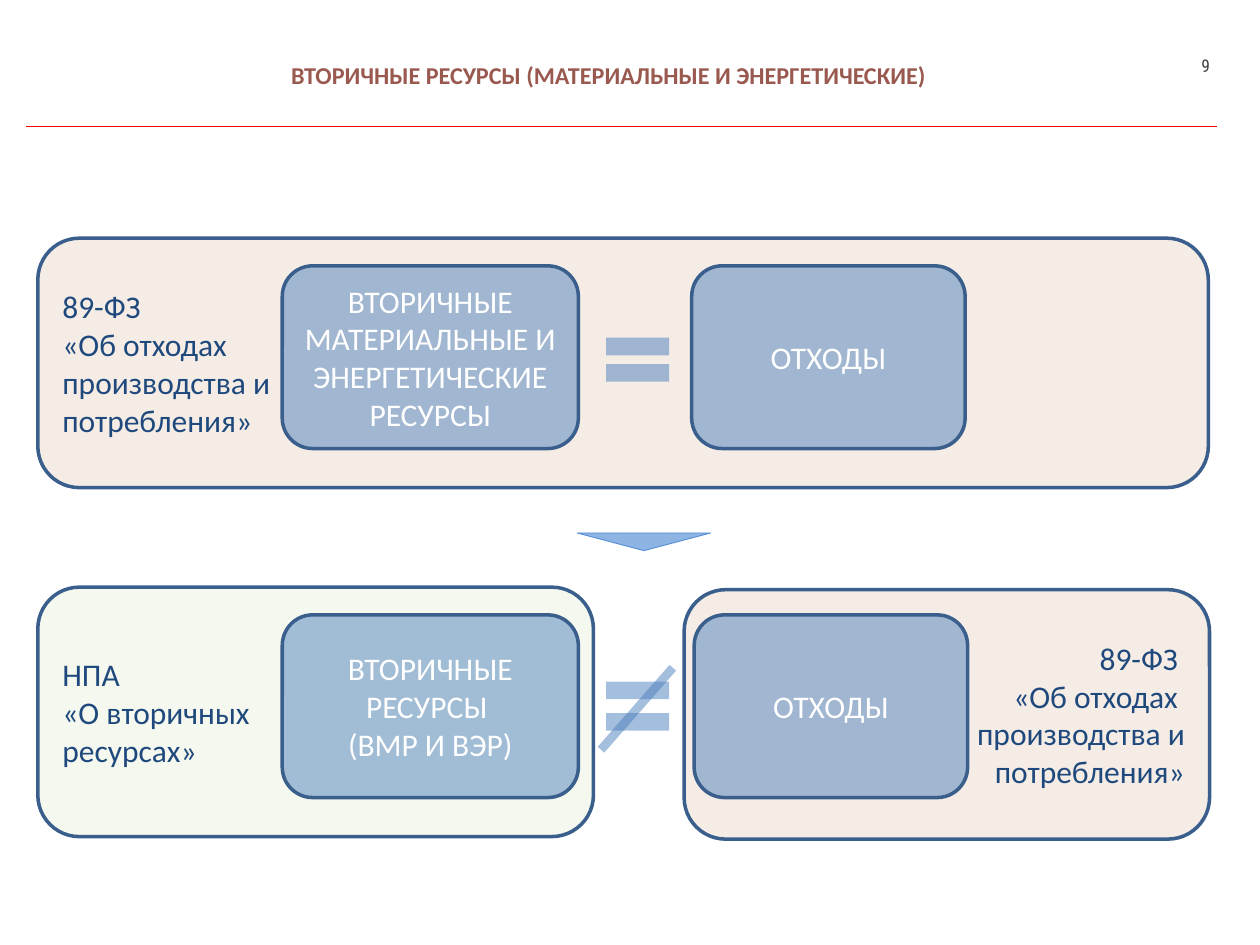
from lxml.etree import SubElement
from pptx import Presentation
from pptx.dml.color import RGBColor
from pptx.enum.shapes import MSO_CONNECTOR as Connector, MSO_SHAPE as Shape
from pptx.enum.text import MSO_ANCHOR as Anchor, MSO_AUTO_SIZE as AutoSize, PP_ALIGN as Align
from pptx.oxml.ns import qn
from pptx.util import Inches, Pt

WHITE = RGBColor(0xFF, 0xFF, 0xFF)
NAVY = RGBColor(0x1F, 0x49, 0x7D)
OUTLINE = RGBColor(0x3A, 0x5F, 0x8C)
BLUE = RGBColor(0x4F, 0x81, 0xBD)
SIGN_BLUE = RGBColor(0x4B, 0x7E, 0xBC)
BROWN = RGBColor(0x98, 0x48, 0x07)
GREEN = RGBColor(0x9B, 0xBB, 0x59)
RED = RGBColor(0xFF, 0x00, 0x00)
TITLE_BROWN = RGBColor(0x99, 0x59, 0x4F)
GRAY = RGBColor(0x40, 0x40, 0x40)
ARROW_FILL = RGBColor(0x8E, 0xB4, 0xE3)
ARROW_LINE = RGBColor(0x55, 0x8E, 0xD5)

LAW_COL, RESOURCE_COL, SIGN_COL, WASTE_COL = 0.3, 2.24, 4.81, 5.49
TOP_ROW, BOTTOM_ROW = 1.89, 4.66
CARD_OFFSET = 0.22
PANEL_H, CARD_H = 1.98, 1.45
RESOURCE_W, WASTE_W = 2.35, 2.17
SIGN_W = 0.5

WASTE_LAW = "89-ФЗ\n«Об отходах\nпроизводства и\nпотребления»"
WASTE_LAW_RIGHT = "89-ФЗ \n«Об отходах \nпроизводства и\nпотребления»"
RESOURCE_LAW = "НПА\n«О вторичных\nресурсах»"


def inches(*lengths):
    return [Inches(length) for length in lengths]


def set_alpha(fill_owner, percent):
    color = fill_owner.find(".//" + qn("a:srgbClr"))
    SubElement(color, qn("a:alpha")).set("val", str(percent * 1000))


def write(frame, text, size, color, align, font="Calibri", bold=False):
    frame.text = text
    frame.word_wrap = True
    for paragraph in frame.paragraphs:
        paragraph.alignment = align
        for run in paragraph.runs:
            run.font.name = font
            run.font.size = Pt(size)
            run.font.bold = bold
            run.font.color.rgb = color


def add_box(slide, place, text, fill, alpha, color, align):
    box = slide.shapes.add_shape(Shape.ROUNDED_RECTANGLE, *inches(*place))
    box.shadow.inherit = False
    box.fill.solid()
    box.fill.fore_color.rgb = fill
    set_alpha(box.fill._xPr, alpha)
    box.line.color.rgb = OUTLINE
    box.line.width = Pt(2)
    box.text_frame.vertical_anchor = Anchor.MIDDLE
    write(box.text_frame, text, 18, color, align)


def add_panel(slide, left, top, width, text, fill, align=Align.LEFT):
    add_box(slide, (left, top, width, PANEL_H), text, fill, 10, NAVY, align)


def add_card(slide, left, row, width, text):
    place = (left, row + CARD_OFFSET, width, CARD_H)
    add_box(slide, place, text, BLUE, 50, WHITE, Align.CENTER)


def add_line(slide, start, end, color, width, alpha=100):
    line = slide.shapes.add_connector(Connector.STRAIGHT, *inches(*start, *end))
    line.line.color.rgb = color
    line.line.width = Pt(width)
    if alpha < 100:
        set_alpha(line.line._ln, alpha)
    SubElement(line._element.spPr, qn("a:effectLst"))


def add_equals(slide, *bar_heights):
    for y in bar_heights:
        add_line(slide, (SIGN_COL, y), (SIGN_COL + SIGN_W, y), SIGN_BLUE, 10, 50)


def add_heading(slide):
    title = slide.shapes.title
    title.left, title.top, title.width, title.height = inches(2.31, 0.43, 7.35, 0.33)
    frame = title.text_frame
    frame.auto_size = AutoSize.NONE
    frame.margin_left = frame.margin_right = 0
    write(frame, "ВТОРИЧНЫЕ РЕСУРСЫ (МАТЕРИАЛЬНЫЕ И ЭНЕРГЕТИЧЕСКИЕ)",
          13.8, TITLE_BROWN, Align.LEFT, bold=True)
    number = slide.shapes.add_textbox(*inches(9.12, 0.39, 0.58, 0.28))
    write(number.text_frame, "9", 10, GRAY, Align.RIGHT, "Roboto Condensed")
    add_line(slide, (0.21, 1), (9.66, 1), RED, 0.5)


def add_down_arrow(slide):
    arrow = slide.shapes.add_shape(Shape.ISOSCELES_TRIANGLE, *inches(4.58, 4.23, 1.06, 0.14))
    arrow.rotation = 180
    arrow.shadow.inherit = False
    arrow.fill.solid()
    arrow.fill.fore_color.rgb = ARROW_FILL
    arrow.line.color.rgb = ARROW_LINE
    arrow.line.width = Pt(0.5)


def main():
    deck = Presentation()
    deck.slide_width, deck.slide_height = inches(10, 7.5)
    slide = deck.slides.add_slide(deck.slide_layouts[5])
    add_heading(slide)

    add_panel(slide, LAW_COL, TOP_ROW, 9.29, WASTE_LAW, BROWN)
    add_card(slide, RESOURCE_COL, TOP_ROW, RESOURCE_W,
             "ВТОРИЧНЫЕ МАТЕРИАЛЬНЫЕ И ЭНЕРГЕТИЧЕСКИЕ РЕСУРСЫ")
    add_equals(slide, 2.75, 2.96)
    add_card(slide, WASTE_COL, TOP_ROW, WASTE_W, "ОТХОДЫ")

    add_down_arrow(slide)

    add_panel(slide, 5.43, BOTTOM_ROW + 0.02, 4.17, WASTE_LAW_RIGHT, BROWN, Align.RIGHT)
    add_panel(slide, LAW_COL, BOTTOM_ROW, 4.41, RESOURCE_LAW, GREEN)
    add_card(slide, RESOURCE_COL, BOTTOM_ROW, RESOURCE_W, "ВТОРИЧНЫЕ РЕСУРСЫ \n(ВМР И ВЭР)")
    add_line(slide, (4.77, 5.95), (5.34, 5.3), SIGN_BLUE, 5, 50)
    add_equals(slide, 5.48, 5.73)
    add_card(slide, WASTE_COL + 0.02, BOTTOM_ROW, WASTE_W, "ОТХОДЫ")

    deck.save("out.pptx")


if __name__ == "__main__":
    main()
